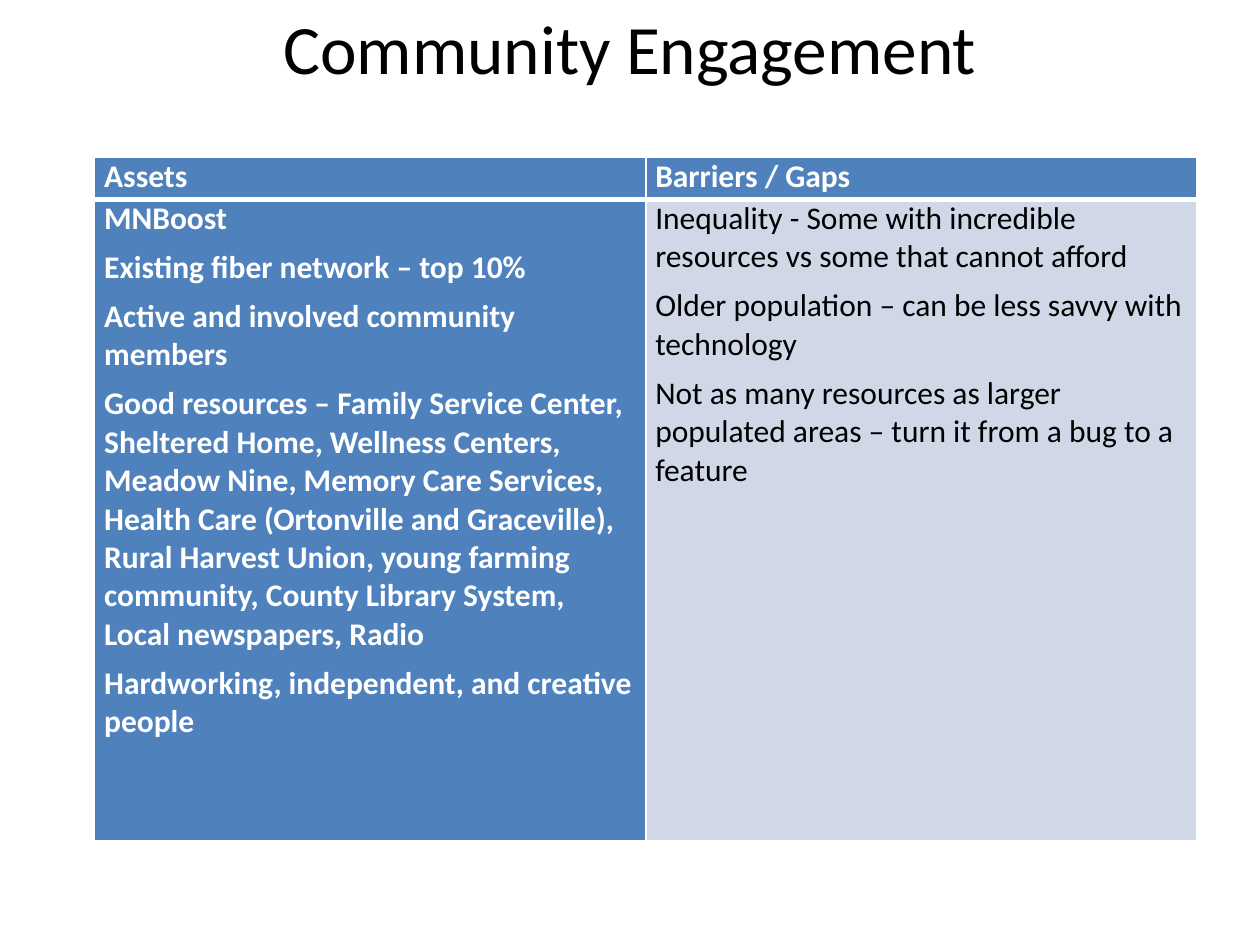
"""Build the Community Engagement slide with its table of assets and barriers."""
from lxml import etree
from pptx import Presentation
from pptx.dml.color import RGBColor
from pptx.enum.text import MSO_ANCHOR, MSO_AUTO_SIZE, PP_ALIGN
from pptx.oxml.ns import qn
from pptx.util import Cm, Pt

CENTER = PP_ALIGN.CENTER
MIDDLE = MSO_ANCHOR.MIDDLE
NO_AUTOFIT = MSO_AUTO_SIZE.NONE

BLACK = RGBColor(0x00, 0x00, 0x00)
WHITE = RGBColor(0xFF, 0xFF, 0xFF)
BLUE = RGBColor(0x4F, 0x81, 0xBD)
PALE_BLUE = RGBColor(0xD0, 0xD8, 0xE8)

ASSETS = [
    "MNBoost",
    "Existing fiber network – top 10%",
    "Active and involved community members",
    "Good resources – Family Service Center, Sheltered Home, Wellness Centers, "
    "Meadow Nine, Memory Care Services, Health Care (Ortonville and Graceville), "
    "Rural Harvest Union, young farming community, County Library System, "
    "Local newspapers, Radio",
    "Hardworking, independent, and creative people",
]
BARRIERS = [
    "Inequality - Some with incredible resources vs some that cannot afford",
    "Older population – can be less savvy with technology",
    "Not as many resources as larger populated areas – turn it from a bug to a feature",
]


class SlideBuilder:
    def __init__(self, slide, font="Calibri"):
        self.slide = slide
        self.font = font

    def style(self, paragraph, size, color, bold=False):
        paragraph.font.name = self.font
        paragraph.font.size = Pt(size)
        paragraph.font.bold = bold
        paragraph.font.color.rgb = color

    def title(self, text, left, top, width, height):
        heading = self.slide.shapes.title
        heading.left, heading.top = Cm(left), Cm(top)
        heading.width, heading.height = Cm(width), Cm(height)
        frame = heading.text_frame
        frame.text = text
        frame.auto_size = NO_AUTOFIT
        frame.vertical_anchor = MIDDLE
        frame.paragraphs[0].alignment = CENTER
        self.style(frame.paragraphs[0], 39.6, BLACK)

    def table(self, left, top, column_widths, row_heights):
        grid = self.slide.shapes.add_table(
            len(row_heights), len(column_widths), Cm(left), Cm(top),
            Cm(sum(column_widths)), Cm(sum(row_heights))).table
        for column, width in zip(grid.columns, column_widths):
            column.width = Cm(width)
        for row, height in zip(grid.rows, row_heights):
            row.height = Cm(height)
        return grid

    def borders(self, cell, **widths):
        properties = cell._tc.get_or_add_tcPr()
        for side, width in widths.items():
            line = etree.SubElement(properties, qn(f"a:ln{side}"), w=str(Pt(width)))
            fill = etree.SubElement(line, qn("a:solidFill"))
            etree.SubElement(fill, qn("a:srgbClr"), val=str(WHITE))

    def cell(self, cell, lines, fill, color, bold, space_after=0, top=1, bottom=1):
        self.borders(cell, L=1, R=1, T=top, B=bottom)
        cell.fill.solid()
        cell.fill.fore_color.rgb = fill
        cell.margin_left = cell.margin_right = Cm(0.19)
        cell.margin_top = cell.margin_bottom = 0
        cell.text = "\n".join(lines)
        for paragraph in cell.text_frame.paragraphs:
            paragraph.space_after = Pt(space_after)
            self.style(paragraph, 18, color, bold)


def main():
    prs = Presentation()
    prs.slide_width, prs.slide_height = Cm(25.4), Cm(19.05)
    builder = SlideBuilder(prs.slides.add_slide(prs.slide_layouts[5]))
    builder.title("Community Engagement", 1.27, 0.05, 22.86, 1.78)

    engagement = builder.table(1.91, 3.18, [11.11, 11.11], [0.84, 12.93])
    for column, heading in enumerate(["Assets", "Barriers / Gaps"]):
        builder.cell(engagement.cell(0, column), [heading], BLUE, WHITE, True, bottom=3)
    builder.cell(engagement.cell(1, 0), ASSETS, BLUE, WHITE, True, space_after=6, top=3)
    builder.cell(engagement.cell(1, 1), BARRIERS, PALE_BLUE, BLACK, False, space_after=6, top=3)
    prs.save("out.pptx")


if __name__ == "__main__":
    main()
